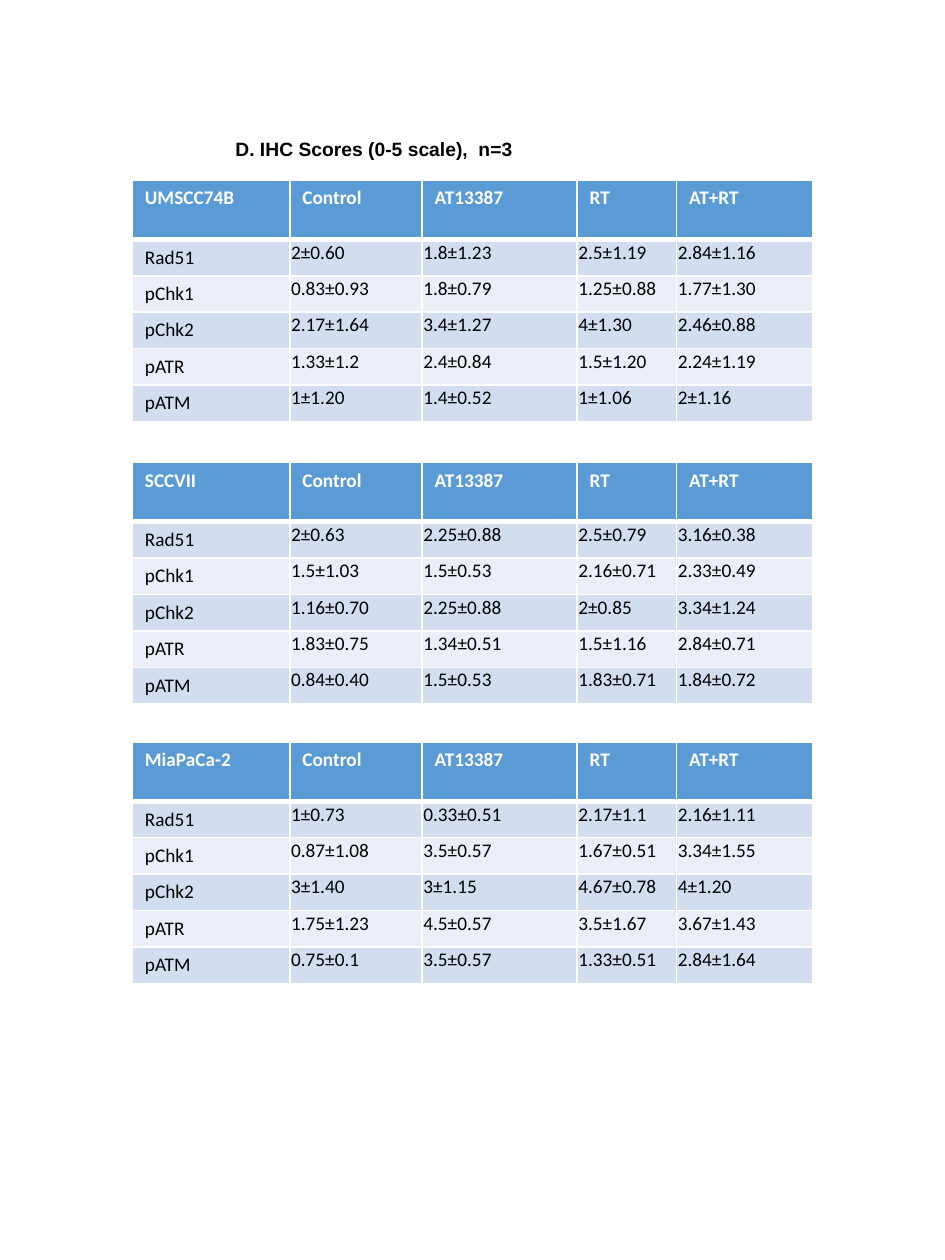
"""Build a slide with three tables of IHC scores, one for each cell line."""
from dataclasses import dataclass

from lxml import etree
from pptx import Presentation
from pptx.dml.color import RGBColor
from pptx.enum.text import MSO_AUTO_SIZE, PP_ALIGN
from pptx.oxml.ns import qn
from pptx.util import Inches, Pt

JUSTIFY = PP_ALIGN.JUSTIFY
FIT_SHAPE = MSO_AUTO_SIZE.SHAPE_TO_FIT_TEXT


@dataclass(frozen=True)
class Theme:
    header: str = "5B9BD5"
    odd_band: str = "D2DEEF"
    even_band: str = "EAEFF7"
    white: str = "FFFFFF"
    black: str = "000000"
    title_font: str = "Arial"
    table_font: str = "Calibri"
    size: float = 11
    rule: float = 1
    header_rule: float = 3


THEME = Theme()
TREATMENTS = ["Control", "AT13387", "RT", "AT+RT"]
MARKERS = ["Rad51", "pChk1", "pChk2", "pATR", "pATM"]
COLUMN_WIDTHS = [1.25, 1.05, 1.23, 0.79, 1.08]
ROW_HEIGHTS = [0.47] + [0.27] * len(MARKERS)
SCORE_TABLES = [
    ("MiaPaCa-2", 5.89, [
        ["1±0.73", "0.33±0.51", "2.17±1.1", "2.16±1.11"],
        ["0.87±1.08", "3.5±0.57", "1.67±0.51", "3.34±1.55"],
        ["3±1.40", "3±1.15", "4.67±0.78", "4±1.20"],
        ["1.75±1.23", "4.5±0.57", "3.5±1.67", "3.67±1.43"],
        ["0.75±0.1", "3.5±0.57", "1.33±0.51", "2.84±1.64"],
    ]),
    ("SCCVII", 3.67, [
        ["2±0.63", "2.25±0.88", "2.5±0.79", "3.16±0.38"],
        ["1.5±1.03", "1.5±0.53", "2.16±0.71", "2.33±0.49"],
        ["1.16±0.70", "2.25±0.88", "2±0.85", "3.34±1.24"],
        ["1.83±0.75", "1.34±0.51", "1.5±1.16", "2.84±0.71"],
        ["0.84±0.40", "1.5±0.53", "1.83±0.71", "1.84±0.72"],
    ]),
    ("UMSCC74B", 1.43, [
        ["2±0.60", "1.8±1.23", "2.5±1.19", "2.84±1.16"],
        ["0.83±0.93", "1.8±0.79", "1.25±0.88", "1.77±1.30"],
        ["2.17±1.64", "3.4±1.27", "4±1.30", "2.46±0.88"],
        ["1.33±1.2", "2.4±0.84", "1.5±1.20", "2.24±1.19"],
        ["1±1.20", "1.4±0.52", "1±1.06", "2±1.16"],
    ]),
]


def add_text(paragraph, text, font, color, bold):
    run = paragraph.add_run()
    run.text = text
    run.font.name = font
    run.font.size = Pt(THEME.size)
    run.font.bold = bold
    run.font.color.rgb = RGBColor.from_string(color)


def set_borders(cell, top, bottom):
    properties = cell._tc.get_or_add_tcPr()
    widths = {"lnL": THEME.rule, "lnR": THEME.rule, "lnT": top, "lnB": bottom}
    for side, width in widths.items():
        line = etree.SubElement(properties, qn(f"a:{side}"), w=str(Pt(width)))
        fill = etree.SubElement(line, qn("a:solidFill"))
        etree.SubElement(fill, qn("a:srgbClr"), val=THEME.white)


presentation = Presentation()
presentation.slide_width = Inches(7.5)
presentation.slide_height = Inches(10)
slide = presentation.slides.add_slide(presentation.slide_layouts[6])

for cell_line, top, scores in SCORE_TABLES:
    rows = [[cell_line] + TREATMENTS]
    rows += [[marker] + values for marker, values in zip(MARKERS, scores)]
    shape = slide.shapes.add_table(
        len(rows), len(COLUMN_WIDTHS), Inches(1.05), Inches(top),
        Inches(sum(COLUMN_WIDTHS)), Inches(sum(ROW_HEIGHTS)))
    table = shape.table
    for column, width in zip(table.columns, COLUMN_WIDTHS):
        column.width = Inches(width)
    for row, height in zip(table.rows, ROW_HEIGHTS):
        row.height = Inches(height)

    for row_index, row_texts in enumerate(rows):
        is_header = row_index == 0
        band = THEME.odd_band if row_index % 2 else THEME.even_band
        for column_index, text in enumerate(row_texts):
            cell = table.cell(row_index, column_index)
            set_borders(
                cell,
                THEME.header_rule if row_index == 1 else THEME.rule,
                THEME.header_rule if is_header else THEME.rule)
            cell.fill.solid()
            cell.fill.fore_color.rgb = RGBColor.from_string(
                THEME.header if is_header else band)
            if not is_header and column_index > 0:
                cell.margin_left = cell.margin_right = Inches(0.01)
                cell.margin_top = Inches(0.01)
                cell.margin_bottom = Inches(0)
            paragraph = cell.text_frame.paragraphs[0]
            paragraph.alignment = JUSTIFY
            add_text(paragraph, text, THEME.table_font,
                     THEME.white if is_header else THEME.black, is_header)

title = slide.shapes.add_textbox(
    Inches(1.77), Inches(1.04), Inches(2.5), Inches(0.29))
title.text_frame.word_wrap = False
title.text_frame.auto_size = FIT_SHAPE
add_text(title.text_frame.paragraphs[0], "D. IHC Scores (0-5 scale),  n=3",
         THEME.title_font, THEME.black, True)

presentation.save("out.pptx")
